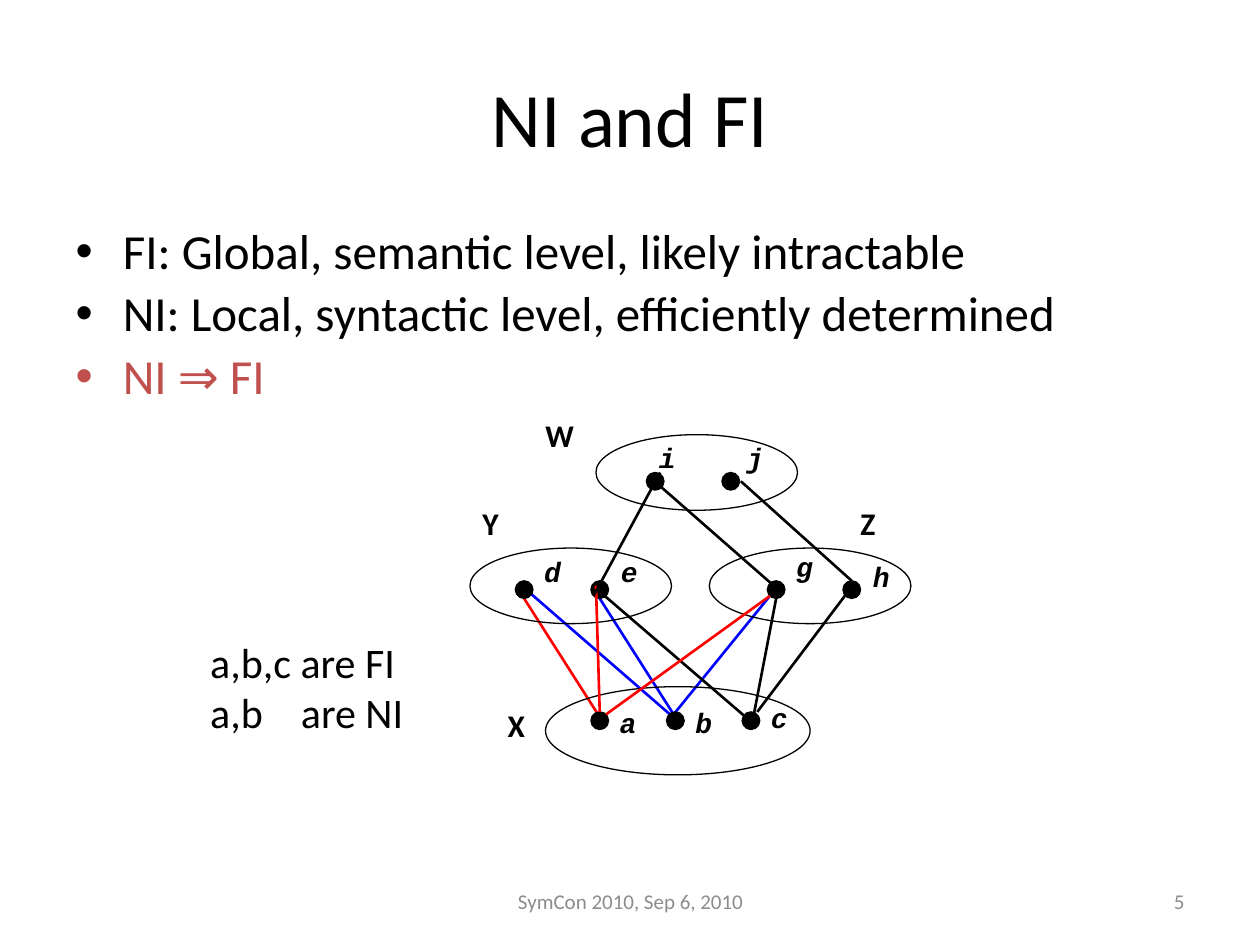
from dataclasses import dataclass
from typing import Any, NamedTuple

from lxml.etree import SubElement
from pptx import Presentation
from pptx.dml.color import RGBColor
from pptx.enum.shapes import MSO_CONNECTOR, MSO_SHAPE
from pptx.enum.text import MSO_ANCHOR, MSO_AUTO_SIZE, PP_ALIGN
from pptx.oxml.ns import qn
from pptx.util import Emu, Pt

SCALE = 9144  # EMU per px, at 100 px to the inch


@dataclass(frozen=True)
class Theme:
    ink: RGBColor = RGBColor(0, 0, 0)
    blue: RGBColor = RGBColor(0, 0, 255)
    red: RGBColor = RGBColor(255, 0, 0)
    brick: RGBColor = RGBColor(0xC0, 0x50, 0x4D)
    grey: RGBColor = RGBColor(0x8C, 0x8C, 0x8C)
    sans: str = "Calibri"
    mono: str = "Courier New"
    title: Pt = Pt(44)
    body: Pt = Pt(28)
    note: Pt = Pt(24)
    group: Pt = Pt(18)
    node: Pt = Pt(16)
    foot: Pt = Pt(12)
    edge: Pt = Pt(1.5)
    rim: Pt = Pt(0.75)


THEME = Theme()


class Box(NamedTuple):
    x: int
    y: int
    w: int
    h: int


class Group(NamedTuple):
    name: str
    label: Box
    oval: Box


class Node(NamedTuple):
    """A dot by its centre, and the corner of its label."""
    name: str
    x: int
    y: int
    left: int
    top: int


class Edge(NamedTuple):
    start: tuple[int, int]
    end: tuple[int, int]
    color: RGBColor = THEME.ink


DOT = 14
TOP, MID, LOW = 382, 468, 572
GROUPS = [
    Group("Y", Box(373, 395, 77, 48), Box(373, 435, 160, 60)),
    Group("Z", Box(673, 395, 60, 48), Box(563, 435, 160, 60)),
    Group("W", Box(423, 325, 77, 48), Box(473, 345, 160, 60)),
    Group("X", Box(393, 555, 60, 48), Box(433, 545, 210, 70)),
]
NODES = [
    Node("i", 520, TOP, 513, 345), Node("j", 580, TOP, 583, 345),
    Node("d", 416, MID, 422, 435), Node("e", 476, MID, 483, 435),
    Node("g", 616, MID, 622, 431), Node("h", 676, MID, 683, 439),
    Node("a", 476, LOW, 482, 555), Node("b", 536, LOW, 542, 555),
    Node("c", 596, LOW, 602, 551),
]
BACK = [
    Edge((541, 575), (413, 464), THEME.blue),
    Edge((541, 577), (476, 475), THEME.blue),
    Edge((533, 569), (611, 473), THEME.blue),
    Edge((481, 577), (416, 475), THEME.red),
    Edge((601, 565), (672, 471)),
]
FRONT = [
    Edge((596, 579), (616, 475)),
    Edge((676, 461), (588, 382)),
    Edge((612, 463), (523, 385)),
    Edge((601, 577), (473, 467)),
    Edge((476, 565), (473, 465), THEME.red),
    Edge((481, 567), (611, 473), THEME.red),
    Edge((471, 473), (524, 375)),
]
POINTS = [
    ("FI: Global, semantic level, likely intractable", THEME.ink),
    ("NI: Local, syntactic level, efficiently determined", THEME.ink),
    ("NI ⇒ FI", THEME.brick),
]


def px(*sizes: int) -> list[Emu]:
    return [Emu(size * SCALE) for size in sizes]


def style(font: Any, color: RGBColor = THEME.ink, **form: Any) -> None:
    for key, value in ({"name": THEME.sans} | form).items():
        setattr(font, key, value)
    font.color.rgb = color


def place(shape: Any, box: Box) -> None:
    for key, value in zip(("left", "top", "width", "height"), px(*box)):
        setattr(shape, key, value)


def write(frame: Any, lines: list[tuple[str, RGBColor]],
          align: PP_ALIGN | None = None, **form: Any) -> None:
    frame.word_wrap = True
    frame.auto_size = MSO_AUTO_SIZE.NONE
    for row, (text, color) in enumerate(lines):
        para = frame.add_paragraph() if row else frame.paragraphs[0]
        para.alignment = align
        run = para.add_run()
        run.text = text
        style(run.font, color, **form)


def add_text(slide: Any, box: Box, *lines: str, color: RGBColor = THEME.ink,
             align: PP_ALIGN = PP_ALIGN.LEFT, **form: Any) -> Any:
    frame = slide.shapes.add_textbox(*px(*box)).text_frame
    write(frame, [(line, color) for line in lines], align, **form)
    return frame


def add_oval(slide: Any, box: Box, solid: bool = False) -> None:
    oval = slide.shapes.add_shape(MSO_SHAPE.OVAL, *px(*box))
    oval.shadow.inherit = False
    if solid:
        oval.fill.solid()
        oval.fill.fore_color.rgb = THEME.ink
    else:
        oval.fill.background()
    oval.line.color.rgb = THEME.ink
    oval.line.width = THEME.rim


def add_edge(slide: Any, edge: Edge) -> None:
    line = slide.shapes.add_connector(
        MSO_CONNECTOR.STRAIGHT, *px(*edge.start, *edge.end))
    line.line.color.rgb = edge.color
    line.line.width = THEME.edge
    SubElement(line._element.spPr, qn("a:effectLst"))


def add_graph(slide: Any) -> None:
    for edge in BACK:
        add_edge(slide, edge)
    for group in GROUPS:
        add_text(slide, group.label, group.name, size=THEME.group, bold=True)
        add_oval(slide, group.oval)
    for node in NODES:
        half = DOT // 2
        add_oval(slide, Box(node.x - half, node.y - half, DOT, DOT), True)
    for edge in FRONT:
        add_edge(slide, edge)
    for node in NODES:
        add_text(slide, Box(node.left, node.top, 22, 44), node.name,
                 name=THEME.mono, size=THEME.node, bold=True, italic=True)


def add_note(slide: Any) -> None:
    frame = add_text(slide, Box(157, 500, 175, 131), "a,b,c are FI",
                     "a,b\tare NI", size=THEME.note)
    tabs = SubElement(frame.paragraphs[1]._p.get_or_add_pPr(), qn("a:tabLst"))
    SubElement(tabs, qn("a:tab"), pos=str(72 * SCALE), algn="l")


def main() -> None:
    deck = Presentation()
    deck.slide_width, deck.slide_height = px(1000, 750)
    slide = deck.slides.add_slide(deck.slide_layouts[1])

    title, body = slide.placeholders
    place(title, Box(50, 30, 900, 125))
    write(title.text_frame, [("NI and FI", THEME.ink)], PP_ALIGN.CENTER,
          size=THEME.title)
    place(body, Box(50, 175, 883, 483))
    write(body.text_frame, POINTS, size=THEME.body)
    for para in body.text_frame.paragraphs:
        para.line_spacing = 0.9

    add_graph(slide)
    add_note(slide)
    for box, text, align in (
        (Box(717, 695, 233, 40), "5", PP_ALIGN.RIGHT),
        (Box(342, 695, 317, 40), "SymCon 2010, Sep 6, 2010", PP_ALIGN.CENTER),
    ):
        frame = add_text(slide, box, text, color=THEME.grey, align=align,
                         size=THEME.foot)
        frame.vertical_anchor = MSO_ANCHOR.MIDDLE
    deck.save("out.pptx")


if __name__ == "__main__":
    main()
